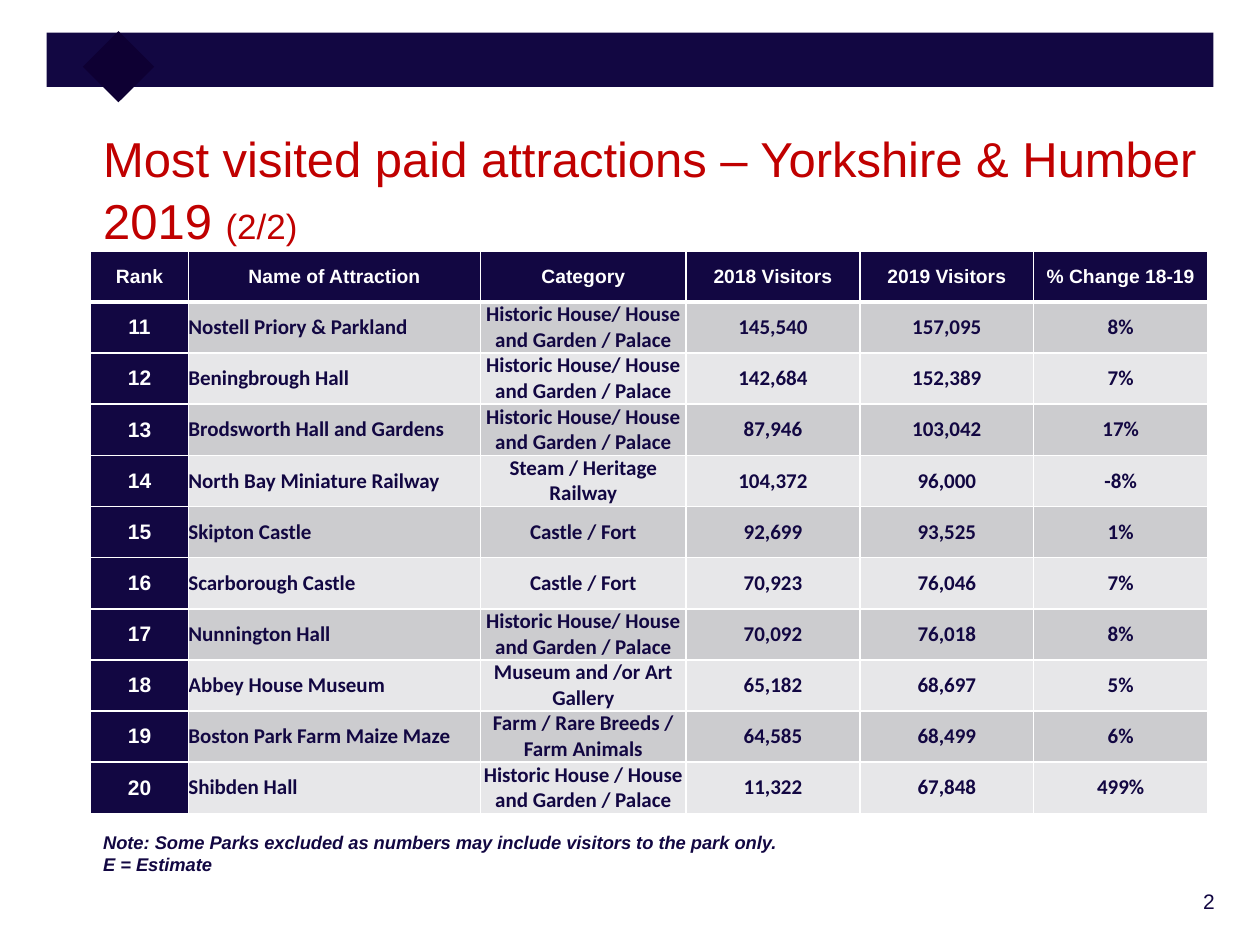
from dataclasses import dataclass

from lxml.etree import SubElement
from pptx import Presentation
from pptx.dml.color import RGBColor
from pptx.enum.shapes import MSO_SHAPE as Preset
from pptx.enum.text import MSO_ANCHOR as Anchor, PP_ALIGN as Align
from pptx.oxml.ns import qn
from pptx.slide import Slide
from pptx.util import Inches, Pt

COLUMNS, ROWS = 100, 75
WIDTH, HEIGHT = Inches(10), Inches(7.5)

HEADINGS = ["Rank", "Name of Attraction", "Category", "2018 Visitors", "2019 Visitors", "% Change 18-19"]
HOUSE = "Historic House/ House and Garden / Palace"
ATTRACTIONS = [
    ["11", "Nostell Priory & Parkland", HOUSE, "145,540", "157,095", "8%"],
    ["12", "Beningbrough Hall", HOUSE, "142,684", "152,389", "7%"],
    ["13", "Brodsworth Hall and Gardens", HOUSE, "87,946", "103,042", "17%"],
    ["14", "North Bay Miniature Railway", "Steam / Heritage Railway", "104,372", "96,000", "-8%"],
    ["15", "Skipton Castle", "Castle / Fort", "92,699", "93,525", "1%"],
    ["16", "Scarborough Castle", "Castle / Fort", "70,923", "76,046", "7%"],
    ["17", "Nunnington Hall", HOUSE, "70,092", "76,018", "8%"],
    ["18", "Abbey House Museum", "Museum and /or Art Gallery", "65,182", "68,697", "5%"],
    ["19", "Boston Park Farm Maize Maze", "Farm / Rare Breeds / Farm Animals", "64,585", "68,499", "6%"],
    ["20", "Shibden Hall", "Historic House / House and Garden / Palace", "11,322", "67,848", "499%"],
]


def color(value):
    return RGBColor.from_string(value)


def across(columns):
    return round(WIDTH * columns / COLUMNS)


def down(rows):
    return round(HEIGHT * rows / ROWS)


def place(left, top, width, height):
    """Turn grid columns and rows into slide lengths."""
    return across(left), down(top), across(width), down(height)


@dataclass
class SlideBuilder:
    slide: Slide
    navy: str = "120742"
    dark: str = "0E0033"
    red: str = "C00000"
    white: str = "FFFFFF"
    bands: tuple = ("CCCCCF", "E7E7E9")
    font: str = "Arial"
    body_font: str = "Calibri"

    def block(self, area, fill, rotation=0):
        shape = self.slide.shapes.add_shape(Preset.RECTANGLE, *place(*area))
        shape.shadow.inherit = False
        shape.fill.solid()
        shape.fill.fore_color.rgb = color(fill)
        shape.line.fill.background()
        shape.rotation = rotation

    def run(self, paragraph, text, size, fill, name=None, bold=False, italic=False):
        run = paragraph.add_run()
        run.text = text
        font = run.font
        font.name = name or self.font
        font.size = Pt(size)
        font.color.rgb = color(fill)
        font.bold, font.italic = bold, italic

    def text(self, area, lines, fill, align=Align.LEFT, spacing=None, **style):
        """Write lines, each a list of (text, size) runs."""
        frame = self.slide.shapes.add_textbox(*place(*area)).text_frame
        frame.word_wrap = True
        for index, line in enumerate(lines):
            paragraph = frame.add_paragraph() if index else frame.paragraphs[0]
            paragraph.alignment = align
            paragraph.line_spacing = spacing
            for text, size in line:
                self.run(paragraph, text, size, fill, **style)

    def borders(self, cell, top, bottom):
        properties = cell._tc.get_or_add_tcPr()
        for side, points in (("L", 1), ("R", 1), ("T", top), ("B", bottom)):
            line = SubElement(properties, qn(f"a:ln{side}"), w=str(Pt(points)))
            SubElement(SubElement(line, qn("a:solidFill")), qn("a:srgbClr"), val=self.white)

    def cell(self, cell, text, row, column):
        is_label = row == 0 or column == 0
        self.borders(cell, top=3 if row == 1 else 1, bottom=3 if row == 0 else 1)
        cell.fill.solid()
        cell.fill.fore_color.rgb = color(self.navy if is_label else self.bands[(row - 1) % 2])
        cell.vertical_anchor = Anchor.MIDDLE
        if not is_label:
            cell.margin_left = cell.margin_right = cell.margin_top = cell.margin_bottom = 0
        paragraph = cell.text_frame.paragraphs[0]
        paragraph.alignment = Align.LEFT if column == 1 and row else Align.CENTER
        self.run(paragraph, text, 12 if row else 11, self.white if is_label else self.navy,
                 name=self.font if is_label else self.body_font, bold=True)

    def table(self, left, top, widths, row_height, records):
        area = place(left, top, sum(widths), row_height * len(records))
        table = self.slide.shapes.add_table(len(records), len(widths), *area).table
        table.horz_banding = False
        for column, width in zip(table.columns, widths):
            column.width = across(width)
        for row, record in enumerate(records):
            table.rows[row].height = down(row_height)
            for column, text in enumerate(record):
                self.cell(table.cell(row, column), text, row, column)


def main():
    presentation = Presentation()
    presentation.slide_width, presentation.slide_height = WIDTH, HEIGHT
    builder = SlideBuilder(presentation.slides.add_slide(presentation.slide_layouts[6]))

    builder.text((85.3, 70, 12.1, 3.6), [[("2", 12)]], builder.navy, align=Align.RIGHT)
    builder.block((3.7, 2.6, 92.6, 4.3), builder.navy)
    builder.block((7.4, 3.3, 4, 4), builder.dark, rotation=45)
    builder.text((7.2, 9.5, 89.1, 8.9),
                 [[("Most visited paid attractions – Yorkshire & Humber 2019 ", 28), ("(2/2)", 20)]],
                 builder.red, spacing=1.05)
    builder.table(7.2, 19.9, [7.75, 23.2, 16.3, 13.8, 13.8, 13.8], 4.06, [HEADINGS, *ATTRACTIONS])
    builder.text((7.2, 65.5, 86.5, 4.5),
                 [[("Note: Some Parks excluded as numbers may include visitors to the park only.", 10.5)],
                  [("E = Estimate", 10.5)]],
                 builder.navy, bold=True, italic=True)
    presentation.save("out.pptx")


if __name__ == "__main__":
    main()
